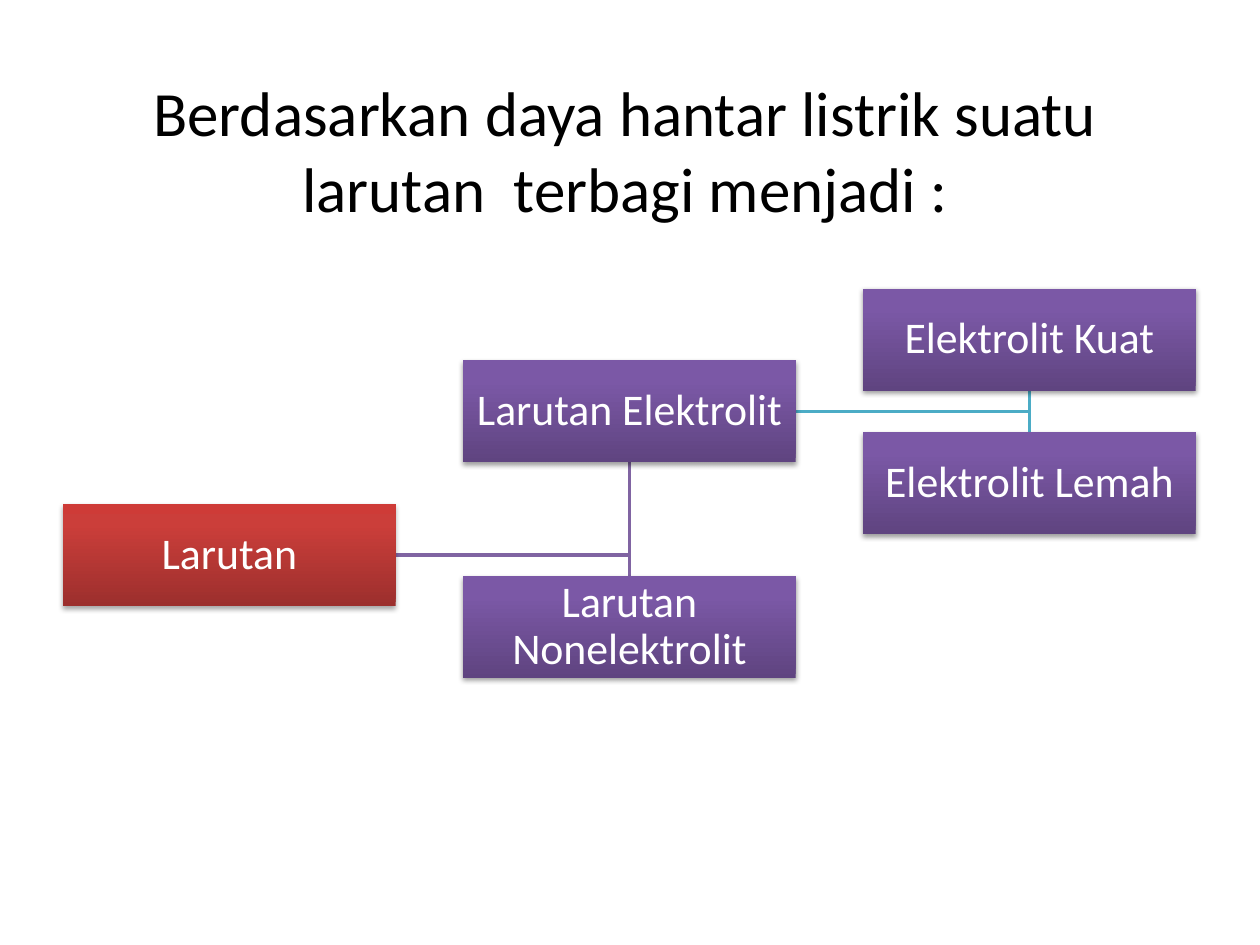
from dataclasses import dataclass

from pptx import Presentation
from pptx.dml.color import RGBColor as RGB
from pptx.enum.shapes import MSO_SHAPE as Shape
from pptx.enum.text import MSO_ANCHOR as Anchor, MSO_AUTO_SIZE as AutoSize, PP_ALIGN as Align
from pptx.oxml import parse_xml
from pptx.oxml.ns import nsdecls, qn
from pptx.slide import Slide
from pptx.util import Inches, Pt


@dataclass(frozen=True)
class Fill:
    dark: str
    mid: str
    light: str
    shadow_alpha: int
    shadow_gap: float


@dataclass(frozen=True)
class Theme:
    font: str = "Calibri"
    title_size: int = 36
    node_size: int = 25
    line_width: int = 2
    title_color: str = "000000"
    node_color: str = "FFFFFF"
    first_link: str = "8064A2"
    second_link: str = "4BACC6"
    root: Fill = Fill("9C2F2D", "CB3E3A", "CE3B37", 35, 1.8)
    branch: Fill = Fill("5F4480", "7B58A6", "7C57A8", 38, 1.6)


@dataclass(frozen=True)
class Grid:
    left: float = 0.5
    top: float = 2.29
    col_step: float = 3.175
    row_step: float = 0.57
    width: float = 2.64
    height: float = 0.81


THEME = Theme()
GRID = Grid()


@dataclass(frozen=True)
class Node:
    text: str
    col: int
    row: int
    fill: Fill = THEME.branch

    @property
    def left(self) -> float:
        return GRID.left + self.col * GRID.col_step

    @property
    def top(self) -> float:
        return GRID.top + self.row * GRID.row_step


@dataclass(frozen=True)
class Link:
    parent: Node
    child: Node
    color: str


ROOT = Node("Larutan", 0, 3, THEME.root)
ELECTROLYTE = Node("Larutan Elektrolit", 1, 1)
NON_ELECTROLYTE = Node("Larutan Nonelektrolit", 1, 4)
STRONG = Node("Elektrolit Kuat", 2, 0)
WEAK = Node("Elektrolit Lemah", 2, 2)
NODES = [ROOT, ELECTROLYTE, STRONG, WEAK, NON_ELECTROLYTE]
LINKS = [
    Link(ROOT, NON_ELECTROLYTE, THEME.first_link),
    Link(ELECTROLYTE, WEAK, THEME.second_link),
    Link(ELECTROLYTE, STRONG, THEME.second_link),
    Link(ROOT, ELECTROLYTE, THEME.first_link),
]


def add_run(p, text: str, size: int, color: str) -> None:
    r = p.add_run()
    r.text = text
    r.font.name = THEME.font
    r.font.size = Pt(size)
    r.font.color.rgb = RGB.from_string(color)


def set_title(slide: Slide, text: str) -> None:
    s = slide.shapes.title
    s.left, s.top, s.width, s.height = (Inches(v) for v in (0.67, 0.53, 8.58, 1.31))
    tf = s.text_frame
    tf.word_wrap = True
    tf.auto_size = AutoSize.NONE
    tf.vertical_anchor = Anchor.MIDDLE
    p = tf.paragraphs[0]
    p.alignment = Align.CENTER
    add_run(p, text, THEME.title_size, THEME.title_color)


def add_link(slide: Slide, link: Link) -> None:
    parent, child = link.parent, link.child
    start_x = parent.left + GRID.width
    mid_y = parent.top + GRID.height / 2
    end_x = child.left + GRID.width / 2
    end_y = child.top + (GRID.height if child.row < parent.row else 0)
    path = [(Inches(x), Inches(y)) for x, y in ((start_x, mid_y), (end_x, mid_y), (end_x, end_y))]
    builder = slide.shapes.build_freeform(*path[0])
    builder.add_line_segments(path[1:], close=False)
    s = builder.convert_to_shape()
    s.shadow.inherit = False
    s.fill.background()
    s.line.color.rgb = RGB.from_string(link.color)
    s.line.width = Pt(THEME.line_width)


def paint(s, fill: Fill) -> None:
    s.line.fill.background()
    s.shadow.inherit = False
    sp_pr = s._element.spPr
    stops = "".join(
        f'<a:gs pos="{pos * 1000}"><a:srgbClr val="{color}"/></a:gs>'
        for pos, color in ((0, fill.dark), (80, fill.mid), (100, fill.light))
    )
    sp_pr.find(qn("a:prstGeom")).addnext(parse_xml(
        f'<a:gradFill {nsdecls("a")} rotWithShape="1"><a:gsLst>{stops}</a:gsLst>'
        '<a:lin ang="16200000" scaled="0"/></a:gradFill>'
    ))
    sp_pr.find(qn("a:effectLst")).append(parse_xml(
        f'<a:outerShdw {nsdecls("a")} blurRad="{Pt(3.1)}" dist="{Pt(fill.shadow_gap)}" '
        'dir="5400000" rotWithShape="0"><a:srgbClr val="000000">'
        f'<a:alpha val="{fill.shadow_alpha * 1000}"/></a:srgbClr></a:outerShdw>'
    ))


def add_node(slide: Slide, node: Node) -> None:
    box = (Inches(v) for v in (node.left, node.top, GRID.width, GRID.height))
    s = slide.shapes.add_shape(Shape.RECTANGLE, *box)
    paint(s, node.fill)
    tf = s.text_frame
    tf.word_wrap = True
    tf.vertical_anchor = Anchor.MIDDLE
    tf.margin_left = tf.margin_right = tf.margin_top = tf.margin_bottom = Inches(0.02)
    p = tf.paragraphs[0]
    p.alignment = Align.CENTER
    p.line_spacing = 0.9
    add_run(p, node.text, THEME.node_size, THEME.node_color)


def main() -> None:
    prs = Presentation()
    prs.slide_width, prs.slide_height = Inches(10), Inches(7.5)
    slide = prs.slides.add_slide(prs.slide_layouts[5])
    set_title(slide, "Berdasarkan daya hantar listrik suatu larutan  terbagi menjadi :")
    for link in LINKS:
        add_link(slide, link)
    for node in NODES:
        add_node(slide, node)
    prs.save("out.pptx")


if __name__ == "__main__":
    main()
